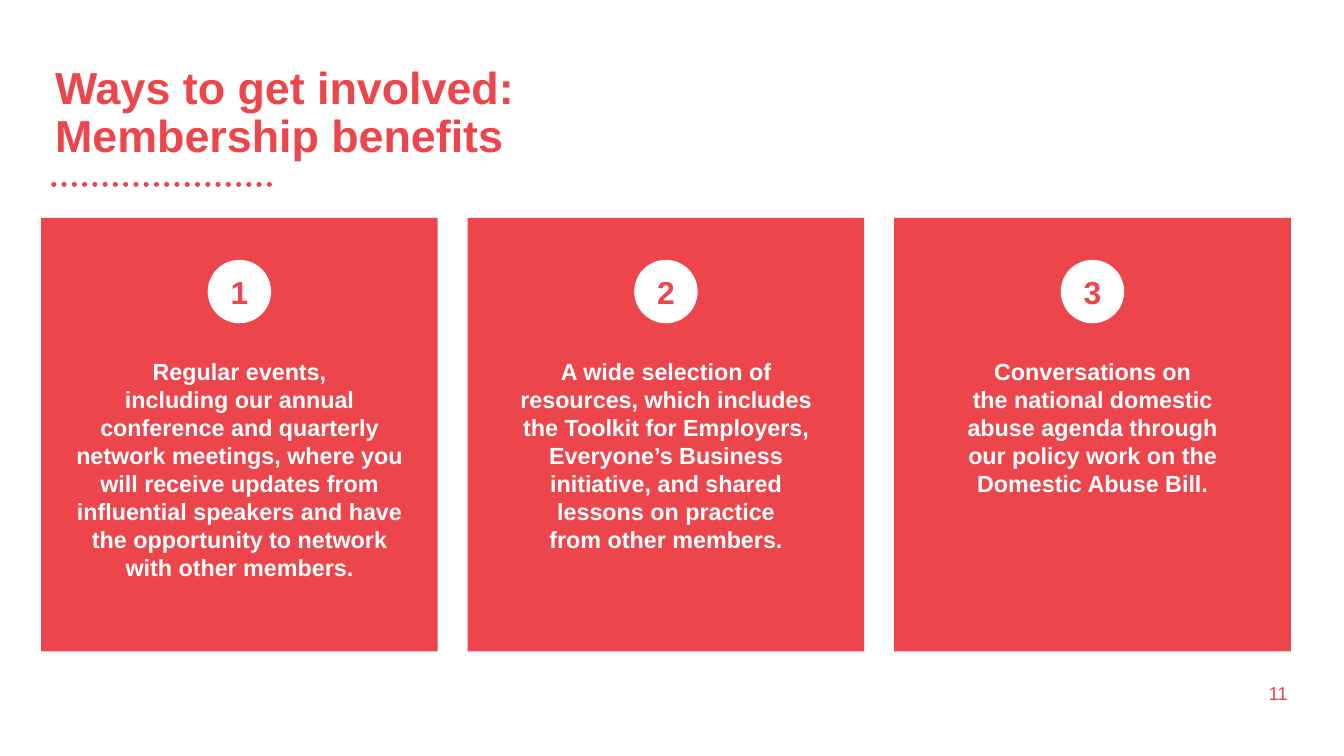
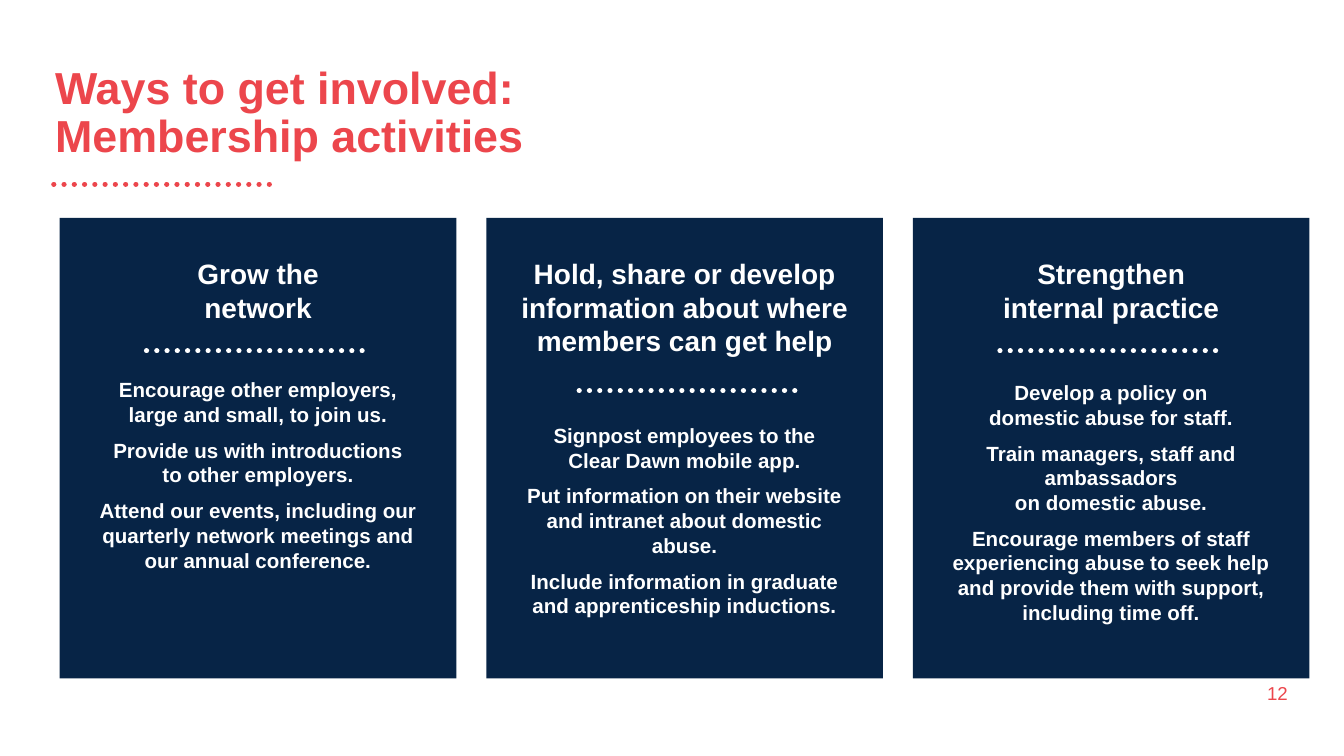
from lxml import etree
from pptx import Presentation
from pptx.dml.color import RGBColor
from pptx.enum.dml import MSO_LINE
from pptx.enum.shapes import MSO_CONNECTOR, MSO_SHAPE
from pptx.enum.text import MSO_ANCHOR, MSO_AUTO_SIZE, PP_ALIGN
from pptx.oxml.ns import qn
from pptx.util import Pt

CORAL = RGBColor(0xEC, 0x46, 0x4C)
NAVY = RGBColor(0x07, 0x24, 0x46)
WHITE = RGBColor(0xFF, 0xFF, 0xFF)
FONT = "Arial"

STRAIGHT = MSO_CONNECTOR.STRAIGHT
DOTTED = MSO_LINE.ROUND_DOT
RECTANGLE, OVAL = MSO_SHAPE.RECTANGLE, MSO_SHAPE.OVAL
TOP, MIDDLE, BOTTOM = MSO_ANCHOR.TOP, MSO_ANCHOR.MIDDLE, MSO_ANCHOR.BOTTOM
LEFT, CENTER, RIGHT = PP_ALIGN.LEFT, PP_ALIGN.CENTER, PP_ALIGN.RIGHT
NO_AUTOFIT = MSO_AUTO_SIZE.NONE

CARD_TOP, CARD_WIDTH, CARD_PITCH = 116.7, 212.5, 228.5
TEXT_WIDTH = 193
TEXT_INDENT = (CARD_WIDTH - TEXT_WIDTH) / 2
BADGE_SIZE = 34
DIVIDER_LENGTH = 119.5

BENEFITS = [
    "Regular events,\nincluding our annual conference and quarterly network meetings, "
    "where you will receive updates from influential speakers and have the opportunity "
    "to network with other members.",
    "A wide selection of resources, which includes\nthe Toolkit for Employers,\n"
    "Everyone’s Business initiative, and shared\nlessons on practice\n"
    "from other members.",
    "Conversations on\nthe national domestic\nabuse agenda through\n"
    "our policy work on the Domestic Abuse Bill.",
]

ACTIVITIES = [
    {
        "heading": "Grow the\nnetwork",
        "divider": (78.5, 188),
        "body": (198.5, TEXT_WIDTH),
        "actions": [
            "Encourage other employers,\nlarge and small, to join us.",
            "Provide us with introductions\nto other employers.",
            "Attend our events, including our quarterly network meetings "
            "and our annual conference.",
        ],
    },
    {
        "heading": "Hold, share or develop information about where members can get help",
        "divider": (310.3, 209.3),
        "body": (223, TEXT_WIDTH),
        "actions": [
            "Signpost employees to the\nClear Dawn mobile app.",
            "Put information on their website and intranet about domestic abuse.",
            "Include information in graduate and apprenticeship inductions.",
        ],
    },
    {
        "heading": "Strengthen\ninternal practice",
        "divider": (535.7, 188),
        "body": (200, CARD_WIDTH),
        "actions": [
            "Develop a policy on\ndomestic abuse for staff.",
            "Train managers, staff and ambassadors\non domestic abuse.",
            "Encourage members of staff experiencing abuse to seek help\n"
            "and provide them with support, including time off.",
        ],
    },
]


def write_text(frame, texts, size, color, align=CENTER, anchor=TOP, bold=True, spacing=None):
    frame.word_wrap = True
    frame.auto_size = NO_AUTOFIT
    frame.vertical_anchor = anchor
    font_values = {"name": FONT, "size": Pt(size), "bold": bold}
    for index, text in enumerate(texts):
        para = frame.add_paragraph() if index else frame.paragraphs[0]
        para.text = text
        para.alignment = align
        para.space_before = Pt(6 if index else 0)
        if spacing:
            para.line_spacing = spacing
        for span in para.runs:
            for name, value in font_values.items():
                setattr(span.font, name, value)
            span.font.color.rgb = color


def add_text(page, left, top, width, height, texts, size, color, **style):
    box = page.shapes.add_textbox(Pt(left), Pt(top), Pt(width), Pt(height))
    write_text(box.text_frame, texts, size, color, **style)


def add_filled(page, kind, left, top, width, height, color):
    shape = page.shapes.add_shape(kind, Pt(left), Pt(top), Pt(width), Pt(height))
    shape.shadow.inherit = False
    shape.fill.solid()
    shape.fill.fore_color.rgb = color
    shape.line.fill.background()
    return shape


def add_dotted_line(page, left, top, color):
    line = page.shapes.add_connector(
        STRAIGHT, Pt(left), Pt(top), Pt(left + DIVIDER_LENGTH), Pt(top)
    )
    line.line.color.rgb = color
    line.line.width = Pt(2.75)
    line.line.dash_style = DOTTED
    line.line._get_or_add_ln().set("cap", "rnd")
    etree.SubElement(line._element.spPr, qn("a:effectLst"))


def add_badge(page, card_left, number):
    left = card_left + (CARD_WIDTH - BADGE_SIZE) / 2
    badge = add_filled(page, OVAL, left, 139.2, BADGE_SIZE, BADGE_SIZE, WHITE)
    frame = badge.text_frame
    for side in ("left", "right", "top", "bottom"):
        setattr(frame, f"margin_{side}", 0)
    write_text(frame, [str(number)], 17, CORAL, anchor=MIDDLE)


def add_page(deck, title, number):
    page = deck.slides.add_slide(deck.slide_layouts[5])
    heading = page.shapes.title
    place = {"left": 22.3, "top": 30.2, "width": 328.3, "height": 60.5}
    for name, value in place.items():
        setattr(heading, name, Pt(value))
    write_text(heading.text_frame, [title], 24, CORAL, align=LEFT, anchor=BOTTOM, spacing=0.9)
    add_dotted_line(page, 28.8, 98.7, CORAL)
    add_text(page, 482.4, 362.9, 214.6, 18, [str(number)], 10, CORAL,
             align=RIGHT, anchor=BOTTOM, bold=False)
    return page


def add_cards(page, first_left, height, color):
    lefts = [first_left + column * CARD_PITCH for column in range(3)]
    for left in lefts:
        add_filled(page, RECTANGLE, left, CARD_TOP, CARD_WIDTH, height, color)
    return lefts


def add_benefits(deck):
    page = add_page(deck, "Ways to get involved:\nMembership benefits", 11)
    lefts = add_cards(page, 22, 232.3, CORAL)
    for number, (left, benefit) in enumerate(zip(lefts, BENEFITS), 1):
        add_badge(page, left, number)
        add_text(page, left + TEXT_INDENT, 188, TEXT_WIDTH, 60, [benefit], 12.5, WHITE)


def add_activities(deck):
    page = add_page(deck, "Ways to get involved:\nMembership activities", 12)
    lefts = add_cards(page, 32, 246.7, NAVY)
    for left, activity in zip(lefts, ACTIVITIES):
        add_text(page, left + TEXT_INDENT, 134, TEXT_WIDTH, 60,
                 [activity["heading"]], 15, WHITE)
        add_dotted_line(page, *activity["divider"], WHITE)
        top, width = activity["body"]
        add_text(page, left + (CARD_WIDTH - width) / 2, top, width, 32,
                 activity["actions"], 11, WHITE)


def main():
    deck = Presentation()
    deck.slide_width = Pt(720)
    deck.slide_height = Pt(405)
    add_benefits(deck)
    add_activities(deck)
    deck.save("out.pptx")


if __name__ == "__main__":
    main()
